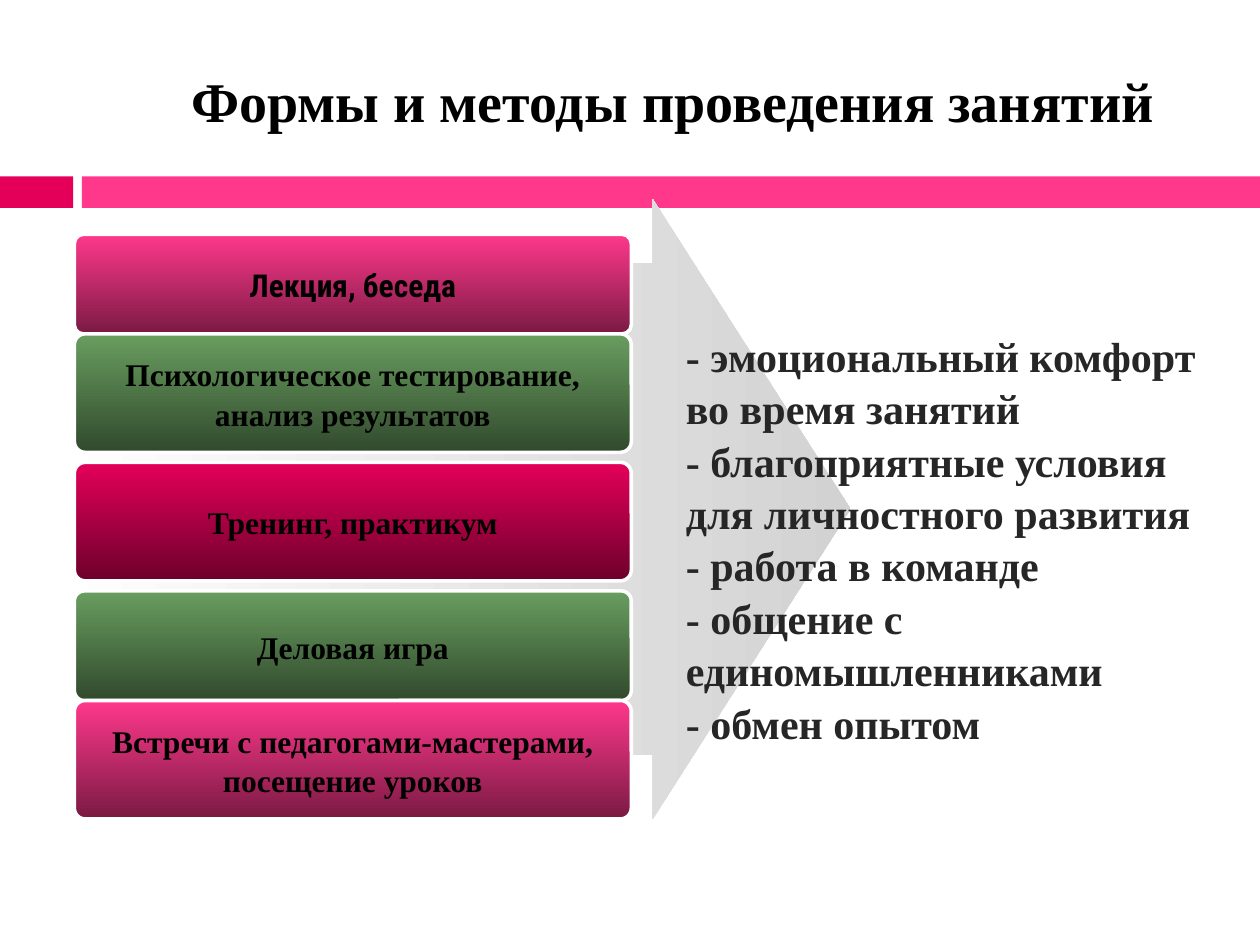
from dataclasses import dataclass

from pptx import Presentation
from pptx.dml.color import RGBColor
from pptx.enum.shapes import MSO_SHAPE
from pptx.enum.text import MSO_ANCHOR, PP_ALIGN
from pptx.util import Inches, Pt

COLS, ROWS = 100, 75


@dataclass(frozen=True)
class Theme:
    font: str = "Times New Roman"
    accent_font: str = "Roboto Condensed"
    title_size: int = 32
    body_size: int = 24
    card_size: int = 18
    ink: str = "000000"
    body_ink: str = "262626"
    paper: str = "FFFFFF"
    crimson: str = "E40059"
    pink: str = "FF388C"
    arrow: tuple = ("FFFFFF", "D2D2D2")
    pink_fade: tuple = ("FF388C", "7A1A43")
    green_fade: tuple = ("699D5F", "314A2D")
    crimson_fade: tuple = ("E40059", "6D002B")


def write(shape, lines, size, color, font, align=PP_ALIGN.LEFT, wrap=True, spacing=1.04):
    tf = shape.text_frame
    tf.word_wrap = wrap
    tf.vertical_anchor = MSO_ANCHOR.MIDDLE
    for i, line in enumerate(lines):
        p = tf.add_paragraph() if i else tf.paragraphs[0]
        p.alignment = align
        p.line_spacing = spacing
        r = p.add_run()
        r.text = line
        r.font.name = font
        r.font.size = Pt(size)
        r.font.bold = True
        r.font.color.rgb = RGBColor.from_string(color)


class SlideBuilder:
    def __init__(self, prs, theme):
        self.theme = theme
        self.slide = prs.slides.add_slide(prs.slide_layouts[6])
        self.col = prs.slide_width / COLS
        self.row = prs.slide_height / ROWS

    def box(self, x, y, w, h):
        """Turn grid columns and rows into slide lengths."""
        return (round(x * self.col), round(y * self.row),
                round(w * self.col), round(h * self.row))

    def shape(self, kind, area, fill=None, angle=0, adjust=()):
        """Add a shape; a pair of colours as fill makes a gradient."""
        sp = self.slide.shapes.add_shape(kind, *self.box(*area))
        sp.shadow.inherit = False
        sp.line.fill.background()
        for i, value in enumerate(adjust):
            sp.adjustments[i] = value
        if fill is None:
            sp.fill.background()
        elif isinstance(fill, str):
            sp.fill.solid()
            sp.fill.fore_color.rgb = RGBColor.from_string(fill)
        else:
            sp.fill.gradient()
            sp.fill.gradient_angle = angle
            for stop, color in zip(sp.fill.gradient_stops, fill):
                stop.color.rgb = RGBColor.from_string(color)
        return sp

    def title(self, text, area):
        sp = self.slide.shapes.add_textbox(*self.box(*area))
        write(sp, [text], self.theme.title_size, self.theme.ink, self.theme.font, spacing=1)

    def bar(self, area, color):
        self.shape(MSO_SHAPE.RECTANGLE, area, color)

    def arrow(self, area):
        self.shape(MSO_SHAPE.RIGHT_ARROW, area, self.theme.arrow, adjust=(0.793, 0.319))

    def card(self, lines, area, fade, font=None):
        sp = self.shape(MSO_SHAPE.ROUNDED_RECTANGLE, area, fade, 270, (0.091,))
        sp.line.color.rgb = RGBColor.from_string(self.theme.paper)
        sp.line.width = Pt(2)
        write(sp, lines, self.theme.card_size, self.theme.ink, font or self.theme.font,
              align=PP_ALIGN.CENTER, wrap=False)

    def benefits(self, lines, area):
        sp = self.shape(MSO_SHAPE.ROUNDED_RECTANGLE, area, adjust=(0.091,))
        sp.text_frame.margin_bottom = Inches(0.43)
        write(sp, lines, self.theme.body_size, self.theme.body_ink, self.theme.font)


def main():
    prs = Presentation()
    prs.slide_width, prs.slide_height = Inches(10), Inches(7.5)
    theme = Theme()
    s = SlideBuilder(prs, theme)

    s.bar((0, 14, 5.8, 2.5), theme.crimson)
    s.bar((6.5, 14, 93.5, 2.5), theme.pink)
    s.arrow((4.2, 15.8, 63.3, 49.2))
    s.title("Формы и методы проведения занятий", (14.2, 3.6, 83.3, 8.7))

    cards = [
        (["Лекция, беседа"], 18.6, 7.9, theme.pink_fade, theme.accent_font),
        (["Психологическое тестирование,", "анализ результатов"],
         26.5, 9.4, theme.green_fade, None),
        (["Тренинг, практикум"], 36.7, 9.4, theme.crimson_fade, None),
        (["Деловая игра"], 46.9, 8.7, theme.green_fade, None),
        (["Встречи с педагогами-мастерами,", "посещение уроков"],
         55.6, 9.4, theme.pink_fade, None),
    ]
    for lines, top, height, fade, font in cards:
        s.card(lines, (5.9, top, 44.2, height), fade, font)

    s.benefits([
        "- эмоциональный комфорт",
        "во время занятий",
        "- благоприятные условия для личностного развития",
        "- работа в команде",
        "- общение с единомышленниками",
        "- обмен опытом",
    ], (52.4, 24.9, 47.6, 39.4))

    prs.save("out.pptx")


if __name__ == "__main__":
    main()
